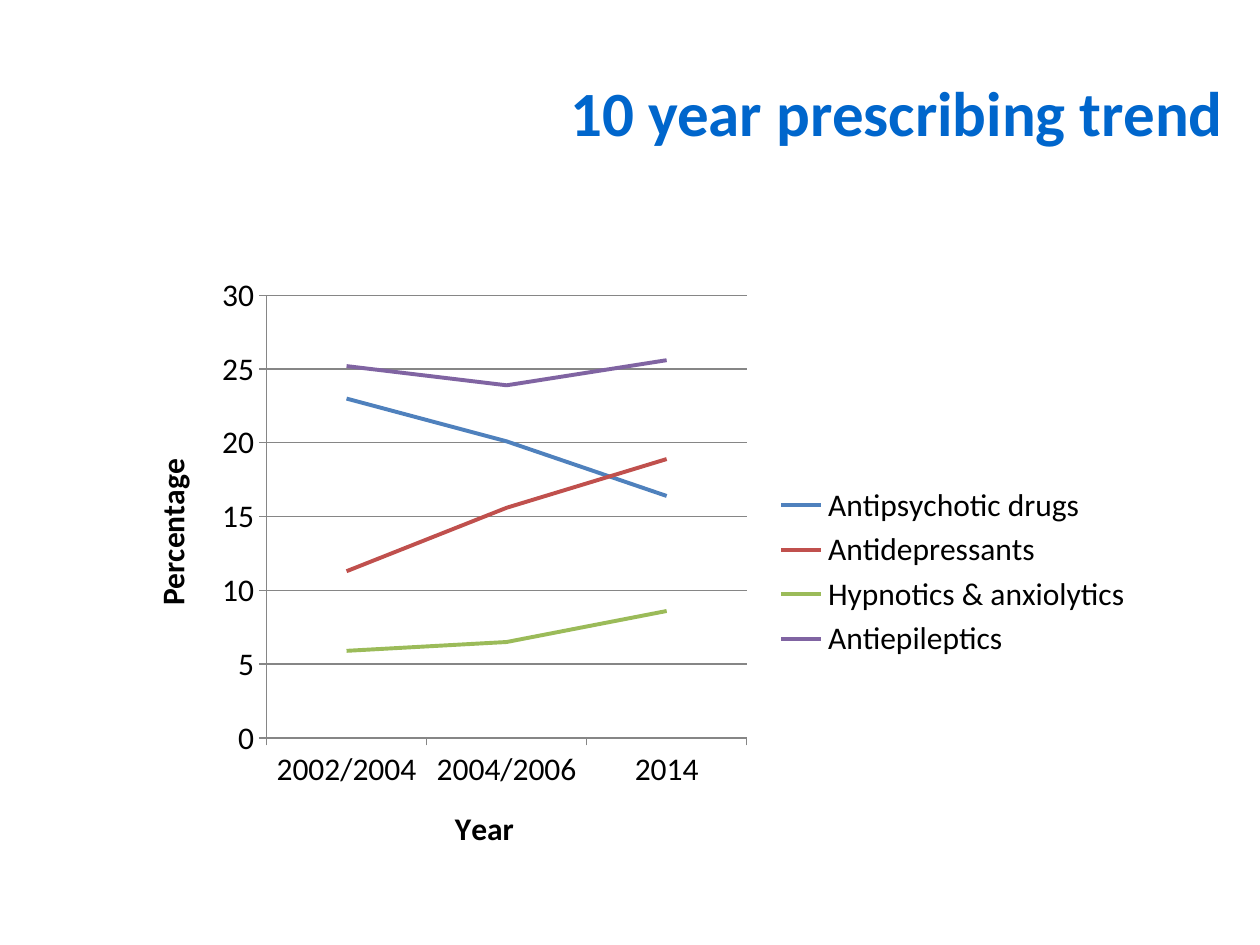
from dataclasses import dataclass

from pptx import Presentation
from pptx.chart.axis import CategoryAxis, ValueAxis
from pptx.chart.chart import Chart
from pptx.chart.data import CategoryChartData
from pptx.dml.color import RGBColor
from pptx.enum.chart import XL_CHART_TYPE, XL_LEGEND_POSITION, XL_TICK_MARK
from pptx.enum.text import MSO_ANCHOR, PP_ALIGN
from pptx.oxml import parse_xml
from pptx.oxml.ns import nsdecls
from pptx.slide import Slide
from pptx.util import Inches, Pt

LINE_CHART = XL_CHART_TYPE.LINE
LEGEND_RIGHT = XL_LEGEND_POSITION.RIGHT
TICK_OUTSIDE = XL_TICK_MARK.OUTSIDE
TICK_NONE = XL_TICK_MARK.NONE
MIDDLE = MSO_ANCHOR.MIDDLE
RIGHT = PP_ALIGN.RIGHT


@dataclass(frozen=True)
class Theme:
    font: str = "Calibri"
    title_size: Pt = Pt(36)
    chart_size: Pt = Pt(18)
    title_color: RGBColor = RGBColor(0x00, 0x66, 0xCC)
    text_color: RGBColor = RGBColor(0x00, 0x00, 0x00)
    axis_color: RGBColor = RGBColor(0x86, 0x86, 0x86)
    axis_width: Pt = Pt(0.75)
    trend_width: Pt = Pt(2.25)


@dataclass(frozen=True)
class Trend:
    name: str
    values: tuple[float, ...]
    color: str


THEME = Theme()
YEARS = ("2002/2004", "2004/2006", "2014")
TRENDS = (
    Trend("Antipsychotic drugs", (23, 20.1, 16.4), "4F81BD"),
    Trend("Antidepressants", (11.3, 15.6, 18.9), "C0504D"),
    Trend("Hypnotics & anxiolytics", (5.9, 6.5, 8.6), "9BBB59"),
    Trend("Antiepileptics", (25.2, 23.9, 25.6), "8064A2"),
)
PLOT_AREA = {"x": 0.14, "y": 0.05, "w": 0.47, "h": 0.72}


def add_title(slide: Slide, text: str) -> None:
    title = slide.shapes.title
    title.left, title.top = Inches(3.35), Inches(0.13)
    title.width, title.height = Inches(6.46), Inches(1.5)
    frame = title.text_frame
    frame.word_wrap = True
    frame.vertical_anchor = MIDDLE
    para = frame.paragraphs[0]
    para.alignment = RIGHT
    span = para.add_run()
    span.text = text
    span.font.name = THEME.font
    span.font.size = THEME.title_size
    span.font.bold = True
    span.font.color.rgb = THEME.title_color


def style_axis(axis: CategoryAxis | ValueAxis, title: str) -> None:
    axis.major_tick_mark = TICK_OUTSIDE
    axis.minor_tick_mark = TICK_NONE
    axis.format.line.color.rgb = THEME.axis_color
    axis.format.line.width = THEME.axis_width
    span = axis.axis_title.text_frame.paragraphs[0].add_run()
    span.text = title
    span.font.name = THEME.font
    span.font.size = THEME.chart_size
    span.font.bold = True
    span.font.color.rgb = THEME.text_color


def place_plot_area(chart: Chart) -> None:
    plot_area = chart.element.xpath(".//c:plotArea")[0]
    for layout in plot_area.xpath("./c:layout"):
        plot_area.remove(layout)
    modes = "".join(f'<c:{side}Mode val="edge"/>' for side in "xy")
    sizes = "".join(f'<c:{key} val="{value}"/>' for key, value in PLOT_AREA.items())
    plot_area.insert(0, parse_xml(
        f'<c:layout {nsdecls("c")}><c:manualLayout><c:layoutTarget val="inner"/>'
        f"{modes}{sizes}</c:manualLayout></c:layout>"
    ))


def add_trend_chart(slide: Slide) -> None:
    data = CategoryChartData()
    data.categories = YEARS
    for trend in TRENDS:
        data.add_series(trend.name, trend.values)
    chart = slide.shapes.add_chart(
        LINE_CHART, Inches(0.98), Inches(2.1), Inches(8.11), Inches(4.88), data
    ).chart
    chart.has_title = False
    chart.font.name = THEME.font
    chart.font.size = THEME.chart_size
    chart.font.color.rgb = THEME.text_color
    chart.has_legend = True
    chart.legend.position = LEGEND_RIGHT
    chart.legend.include_in_layout = False

    style_axis(chart.category_axis, "Year")
    style_axis(chart.value_axis, "Percentage")
    chart.value_axis.minimum_scale = 0
    chart.value_axis.maximum_scale = 30
    chart.value_axis.major_unit = 5
    chart.value_axis.has_major_gridlines = True
    grid_line = chart.value_axis.major_gridlines.format.line
    grid_line.color.rgb = THEME.axis_color
    grid_line.width = THEME.axis_width

    plot = chart.plots[0]
    plot.vary_by_categories = False
    for series, trend in zip(plot.series, TRENDS):
        series.smooth = False
        series.format.line.color.rgb = RGBColor.from_string(trend.color)
        series.format.line.width = THEME.trend_width
    place_plot_area(chart)


def main() -> None:
    deck = Presentation()
    deck.slide_width, deck.slide_height = Inches(10), Inches(7.5)
    page = deck.slides.add_slide(deck.slide_layouts.get_by_name("Title Only"))
    add_title(page, "10 year prescribing trend")
    add_trend_chart(page)
    deck.save("out.pptx")


if __name__ == "__main__":
    main()
